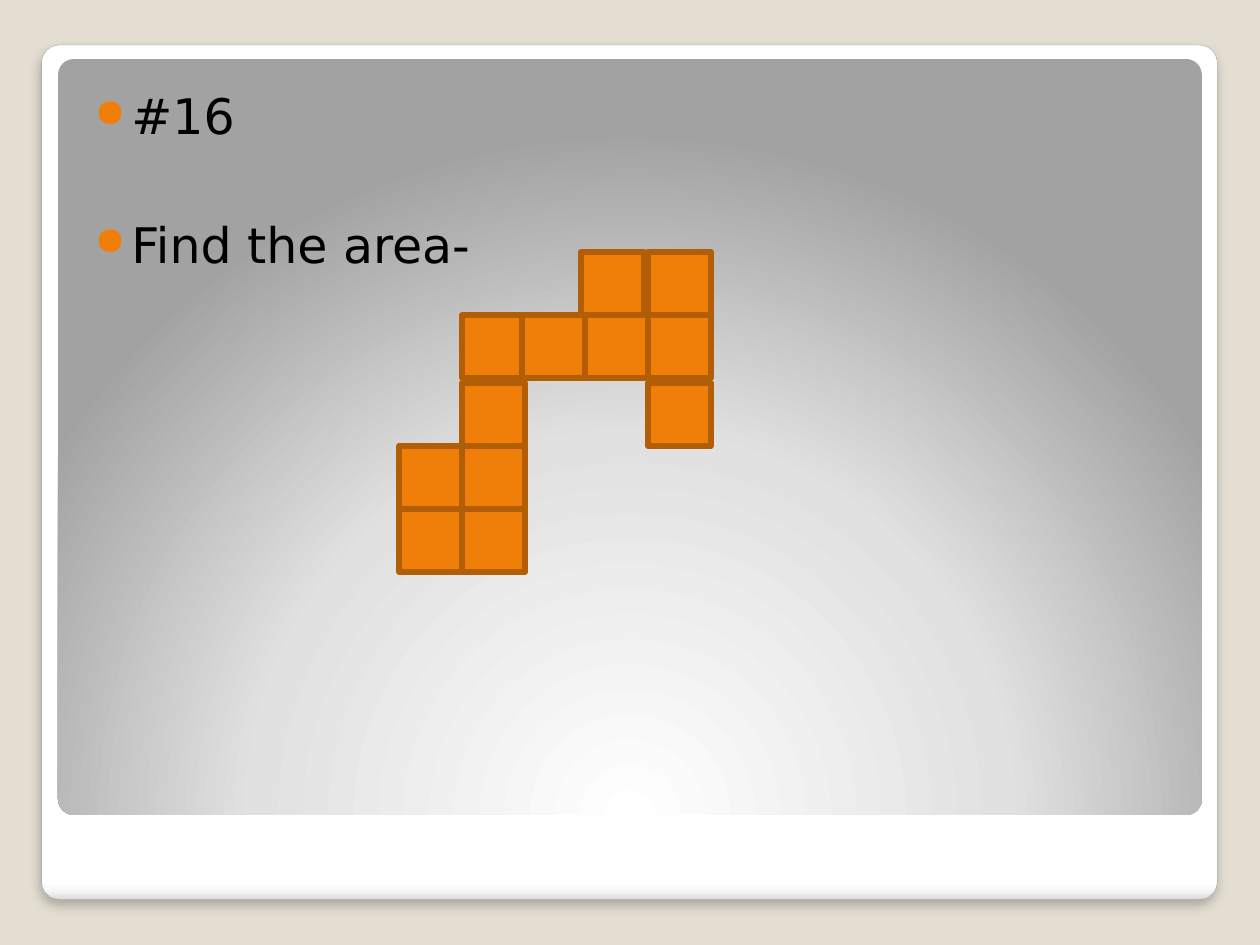
from lxml import etree
from pptx import Presentation
from pptx import util as u
from pptx.dml.color import RGBColor
from pptx.enum import shapes, text
from pptx.oxml import ns

SAND = RGBColor(0xE3, 0xDE, 0xD1)
GRAY = RGBColor(0xA4, 0xA4, 0xA4)
BLACK = RGBColor(0, 0, 0)
ORANGE = RGBColor(0xF0, 0x7F, 0x09)
BROWN = RGBColor(0xB2, 0x5E, 0x07)

SIDE = 1.27
ROWS = [
    (5.08, [11.71, 13.06]),
    (6.35, [9.32, 10.52, 11.79, 13.06]),
    (7.72, [9.32, 13.06]),
    (8.99, [8.05, 9.32]),
    (10.26, [8.05, 9.32]),
]


def assign(item, **vals):
    for key, val in vals.items():
        setattr(item, key, val)


def node(up, tag, **vals):
    attrs = {key: str(val) for key, val in vals.items()}
    return etree.SubElement(up, ns.qn("a:" + tag), attrs)


def place(slide, kind, box):
    shape = slide.shapes.add_shape(kind, *map(u.Cm, box))
    shape.shadow.inherit = False
    return shape


def edge(shape, color, width):
    shape.line.color.rgb = color
    shape.line.width = u.Pt(width)


def blend(shape, stops):
    shape.fill.gradient()
    grad = shape._element.spPr.find(ns.qn("a:gradFill"))
    for child in list(grad):
        grad.remove(child)
    group = node(grad, "gsLst")
    for pos, color in stops:
        stop = node(group, "gs", pos=pos * 1000)
        node(stop, "srgbClr", val=color)
    return grad


def panel(slide, box, stops):
    shape = place(slide, shapes.MSO_SHAPE.ROUNDED_RECTANGLE, box)
    shape.adjustments[0] = 0.021
    return shape, blend(shape, stops)


def frame(slide):
    stops = [(0, "FFFFFF"), (98, "FFFFFF"), (99, "F7F7F7"), (100, "DADADA")]
    shape, grad = panel(slide, (0.84, 0.91, 23.7, 17.22), stops)
    node(grad, "lin", ang=5400000, scaled=0)
    edge(shape, GRAY, 0.16)
    effect = shape._element.spPr.find(ns.qn("a:effectLst"))
    shade = node(effect, "outerShdw", blurRad=u.Pt(6), dist=u.Pt(4),
                 dir=5400000, algn="tl", rotWithShape=0)
    color = node(shade, "srgbClr", val="000000")
    node(color, "alpha", val=25000)


def board(slide):
    stops = [(0, "FFFFFF"), (55, "E1E1E1"), (100, "A2A2A2")]
    shape, grad = panel(slide, (1.17, 1.19, 23.06, 15.24), stops)
    glow = node(grad, "path", path="circle")
    node(glow, "fillToRect", l=50000, t=175000, r=50000, b=-75000)
    shape.line.fill.background()


def bullet(para, words, gap):
    para.space_before = u.Pt(gap)
    run = para.add_run()
    run.text = words
    assign(run.font, name="DejaVu Sans", size=u.Pt(28))
    run.font.color.rgb = BLACK
    props = para._p.get_or_add_pPr()
    props.set("marL", str(u.Cm(0.74)))
    props.set("indent", str(u.Cm(-0.74)))
    node(node(props, "buClr"), "srgbClr", val=str(ORANGE))
    node(props, "buSzPct", val=80000)
    node(props, "buChar", char="●")


def prompt(slide):
    box = slide.shapes.add_textbox(*map(u.Cm, (1.4, 1.47, 22.73, 11.63)))
    frame = box.text_frame
    assign(frame, word_wrap=True, vertical_anchor=text.MSO_ANCHOR.TOP,
           margin_left=u.Cm(0.51), margin_top=u.Cm(0.25),
           margin_right=u.Cm(0.25), margin_bottom=u.Cm(0.13))
    bullet(frame.paragraphs[0], "#16", 2.5)
    bullet(frame.add_paragraph(), "Find the area-", 40)


def square(slide, left, top):
    shape = place(slide, shapes.MSO_SHAPE.RECTANGLE, (left, top, SIDE, SIDE))
    shape.fill.solid()
    shape.fill.fore_color.rgb = ORANGE
    edge(shape, BROWN, 3.35)


def main():
    deck = Presentation()
    assign(deck, slide_width=u.Cm(25.4), slide_height=u.Cm(19.05))
    slide = deck.slides.add_slide(deck.slide_layouts[6])
    back = slide.background.fill
    back.solid()
    back.fore_color.rgb = SAND
    frame(slide)
    board(slide)
    prompt(slide)
    for top, lefts in ROWS:
        for left in lefts:
            square(slide, left, top)
    deck.save("out.pptx")


if __name__ == "__main__":
    main()
